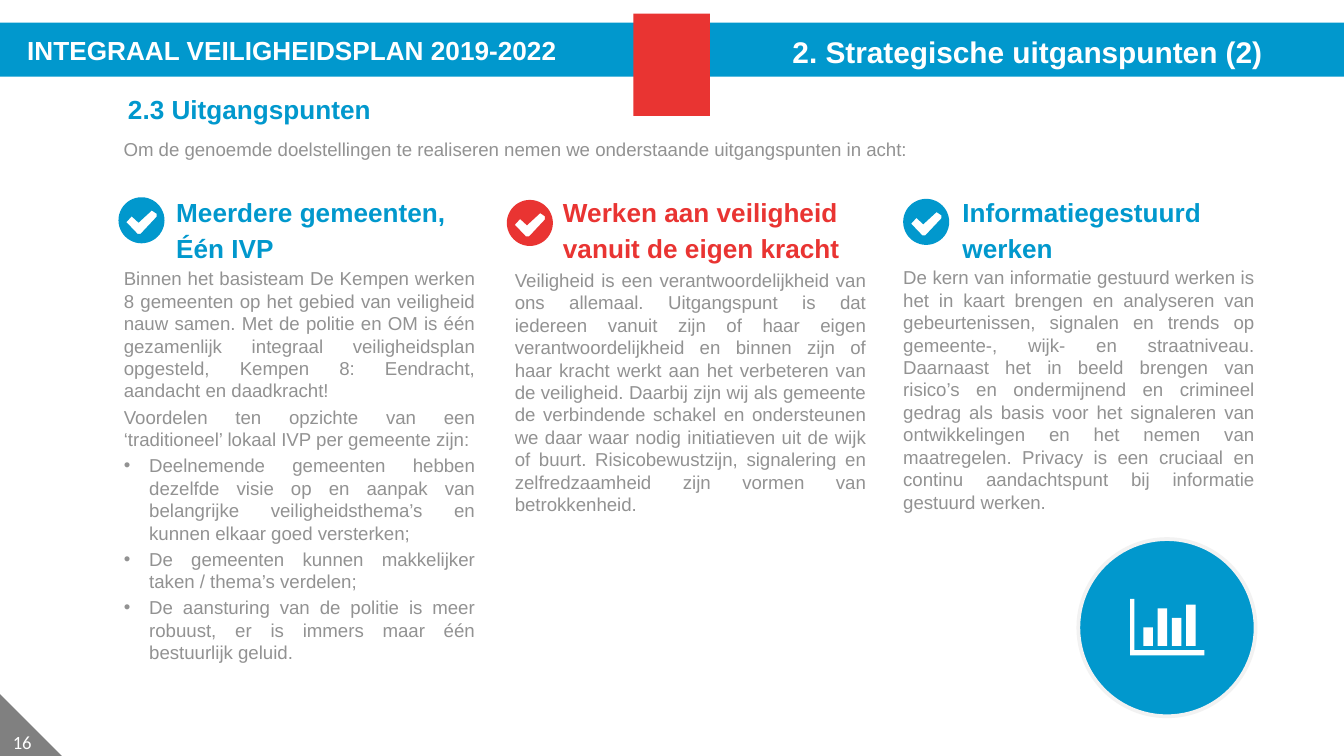
from math import cos, pi, sin

from lxml.etree import SubElement
from pptx import Presentation
from pptx.dml.color import RGBColor as RGB
from pptx.enum.shapes import MSO_SHAPE as Shape
from pptx.enum.text import MSO_ANCHOR as Anchor, MSO_AUTO_SIZE as Fit, PP_ALIGN as Align
from pptx.oxml.ns import qn
from pptx.util import Cm, Pt

BLUE = RGB(0x01, 0x98, 0xCD)
RED = RGB(0xE9, 0x34, 0x32)
GRAY = RGB(0x92, 0x92, 0x92)
DARK = RGB(0x80, 0x80, 0x80)
PALE = RGB(0xF2, 0xF2, 0xF2)
WHITE = RGB(0xFF, 0xFF, 0xFF)

DISC = 0.87
TICK = [(0.72, 0.31), (0.63, 0.25), (0.38, 0.48), (0.25, 0.36),
        (0.15, 0.47), (0.36, 0.69), (0.42, 0.69), (0.72, 0.37)]

# Column: left, colour, icon shift and top, heading shift, text top, heading, text
COLS = [
    (2.34, BLUE, (-0.1, 3.73), 0.99, 5.05, ["Meerdere gemeenten,", "Één IVP"], [
        "Binnen het basisteam De Kempen werken 8 gemeenten op het gebied van veiligheid nauw samen. "
        "Met de politie en OM is één gezamenlijk integraal veiligheidsplan opgesteld, "
        "Kempen 8: Eendracht, aandacht en daadkracht!",
        "Voordelen ten opzichte van een ‘traditioneel’ lokaal IVP per gemeente zijn:"]),
    (9.73, RED, (-0.15, 3.78), 0.91, 5.08, ["Werken aan veiligheid", "vanuit de eigen kracht"], [
        "Veiligheid is een verantwoordelijkheid van ons allemaal. Uitgangspunt is dat iedereen vanuit "
        "zijn of haar eigen verantwoordelijkheid en binnen zijn of haar kracht werkt aan het verbeteren "
        "van de veiligheid. Daarbij zijn wij als gemeente de verbindende schakel en ondersteunen we daar "
        "waar nodig initiatieven uit de wijk of buurt. Risicobewustzijn, signalering en zelfredzaamheid "
        "zijn vormen van betrokkenheid."]),
    (17.07, BLUE, (0, 3.76), 1.12, 5.03, ["Informatiegestuurd", "werken"], [
        "De kern van informatie gestuurd werken is het in kaart brengen en analyseren van gebeurtenissen, "
        "signalen en trends op gemeente-, wijk- en straatniveau. Daarnaast het in beeld brengen van "
        "risico’s en ondermijnend en crimineel gedrag als basis voor het signaleren van ontwikkelingen "
        "en het nemen van maatregelen. Privacy is een cruciaal en continu aandachtspunt bij informatie "
        "gestuurd werken."]),
]
GAINS = [
    "Deelnemende gemeenten hebben dezelfde visie op en aanpak van belangrijke veiligheidsthema’s "
    "en kunnen elkaar goed versterken;",
    "De gemeenten kunnen makkelijker taken / thema’s verdelen;",
    "De aansturing van de politie is meer robuust, er is immers maar één bestuurlijk geluid.",
]


def paint(item, fill, line=None):
    item.shadow.inherit = False
    item.fill.solid()
    item.fill.fore_color.rgb = fill
    if line:
        item.line.color.rgb = line
        item.line.width = Pt(2)
    else:
        item.line.fill.background()


def shape(shapes, kind, box, fill, line=None):
    paint(shapes.add_shape(kind, *map(Cm, box)), fill, line)


def outline(shapes, left, top, paths, fill):
    """Draw closed paths, in cm from left and top, as one shape."""
    pen = None
    for path in paths:
        pts = [(Cm(left + x), Cm(top + y)) for x, y in path]
        if pen is None:
            pen = shapes.build_freeform(*pts[0])
        else:
            pen.move_to(*pts[0])
        pen.add_line_segments(pts[1:], close=True)
    paint(pen.convert_to_shape(), fill)


def write(item, lines, size, color, bold=False, align=Align.LEFT, face="Arial",
          gap=0, anchor=Anchor.TOP, wrap=True):
    frame = item.text_frame
    frame.word_wrap = wrap
    frame.auto_size = Fit.NONE
    frame.vertical_anchor = anchor
    frame.margin_left = frame.margin_right = frame.margin_top = frame.margin_bottom = 0
    frame.text = "\n".join(lines)
    for para in frame.paragraphs:
        para.alignment = align
        para.space_before = Pt(gap)
        font = para.font
        font.name, font.size, font.bold = face, Pt(size), bold
        font.color.rgb = color


def label(shapes, box, *args, **opts):
    write(shapes.add_textbox(*map(Cm, box)), *args, **opts)


def place(item, box):
    item.left, item.top, item.width, item.height = map(Cm, box)
    return item


def bullet(para, mark):
    props = para._p.get_or_add_pPr()
    props.set("marL", str(Cm(0.48) if mark else 0))
    props.set("indent", str(-Cm(0.48) if mark else 0))
    if mark:
        SubElement(props, qn("a:buChar")).set("char", "•")
    else:
        SubElement(props, qn("a:buNone"))


def header(slide, left, top, width):
    # Band with plan name and slide title
    shapes = slide.shapes
    shape(shapes, Shape.RECTANGLE, (left, top, width, 1.02), BLUE)
    label(shapes, (left + 0.36, top + 0.23, 10.32, 0.6), ["INTEGRAAL VEILIGHEIDSPLAN 2019-2022"],
          14, WHITE, True, Align.CENTER)
    write(place(shapes.title, (left + 14.3, top + 0.05, 10.24, 0.99)),
          ["2. Strategische uitganspunten (2)"], 16, WHITE, True, Align.CENTER,
          anchor=Anchor.MIDDLE, wrap=False)
    # Title lies above the band
    shapes._spTree.append(shapes.title._element)
    # Plain accent block
    shape(shapes, Shape.RECTANGLE, (left + 11.97, top - 0.17, 1.45, 1.93), RED)


def column(slide, left, color, icon, shift, top, head, text, gains=()):
    shapes = slide.shapes
    # Check mark cut out of a disc
    rad = DISC / 2
    ring = [(rad + rad * cos(k * pi / 24), rad + rad * sin(k * pi / 24)) for k in range(48)]
    outline(shapes, left + icon[0], icon[1], [ring, TICK], color)
    label(shapes, (left + shift, 3.71, 5.4, 1.32), head, 14, color, True, gap=2.8, wrap=False)
    # Text, in the body placeholder when it holds a list
    box = (left, top, 6.63, 8.1 if gains else 5)
    body = place(slide.placeholders[1], box) if gains else shapes.add_textbox(*map(Cm, box))
    write(body, [*text, *gains], 10, GRAY, align=Align.JUSTIFY, gap=2)
    for num, para in enumerate(body.text_frame.paragraphs):
        bullet(para, num >= len(text))


def chart_sign(slide, left, top, size):
    shape(slide.shapes, Shape.OVAL, (left, top, size, size), BLUE, PALE)
    axes = [(0, 0), (0.08, 0), (0.08, 0.97), (1.4, 0.97), (1.4, 1.07), (0, 1.07)]
    bars = []
    for num, high in enumerate([0.35, 0.71, 0.53, 0.78]):
        x = 0.25 + 0.27 * num
        bars.append([(x, 0.89), (x, 0.89 - high), (x + 0.18, 0.89 - high), (x + 0.18, 0.89)])
    outline(slide.shapes, left + 0.98, top + 1.13, [axes, *bars], WHITE)


def corner(slide, left, top, size):
    shape(slide.shapes, Shape.RIGHT_TRIANGLE, (left, top, size, size), DARK)
    label(slide.shapes, (left, top + 0.7, 0.84, 0.43), ["16"], 10, WHITE,
          align=Align.CENTER, face="Calibri", anchor=Anchor.MIDDLE)


def main():
    deck = Presentation()
    deck.slide_width, deck.slide_height = Cm(25.4), Cm(14.29)
    slide = deck.slides.add_slide(deck.slide_layouts[1])
    corner(slide, 0, 13.12, 1.17)
    header(slide, 0, 0.43, 25.4)
    # Section heading and lead
    label(slide.shapes, (2.42, 1.78, 9, 0.56), ["2.3 Uitgangspunten"], 14, BLUE, True,
          anchor=Anchor.MIDDLE)
    label(slide.shapes, (0, 2.61, 19.46, 0.43),
          ["Om de genoemde doelstellingen te realiseren nemen we onderstaande uitgangspunten in acht:"],
          10, GRAY, align=Align.CENTER)
    for num, col in enumerate(COLS):
        column(slide, *col, gains=() if num else GAINS)
    chart_sign(slide, 20.38, 10.19, 3.35)
    deck.save("out.pptx")


if __name__ == "__main__":
    main()
